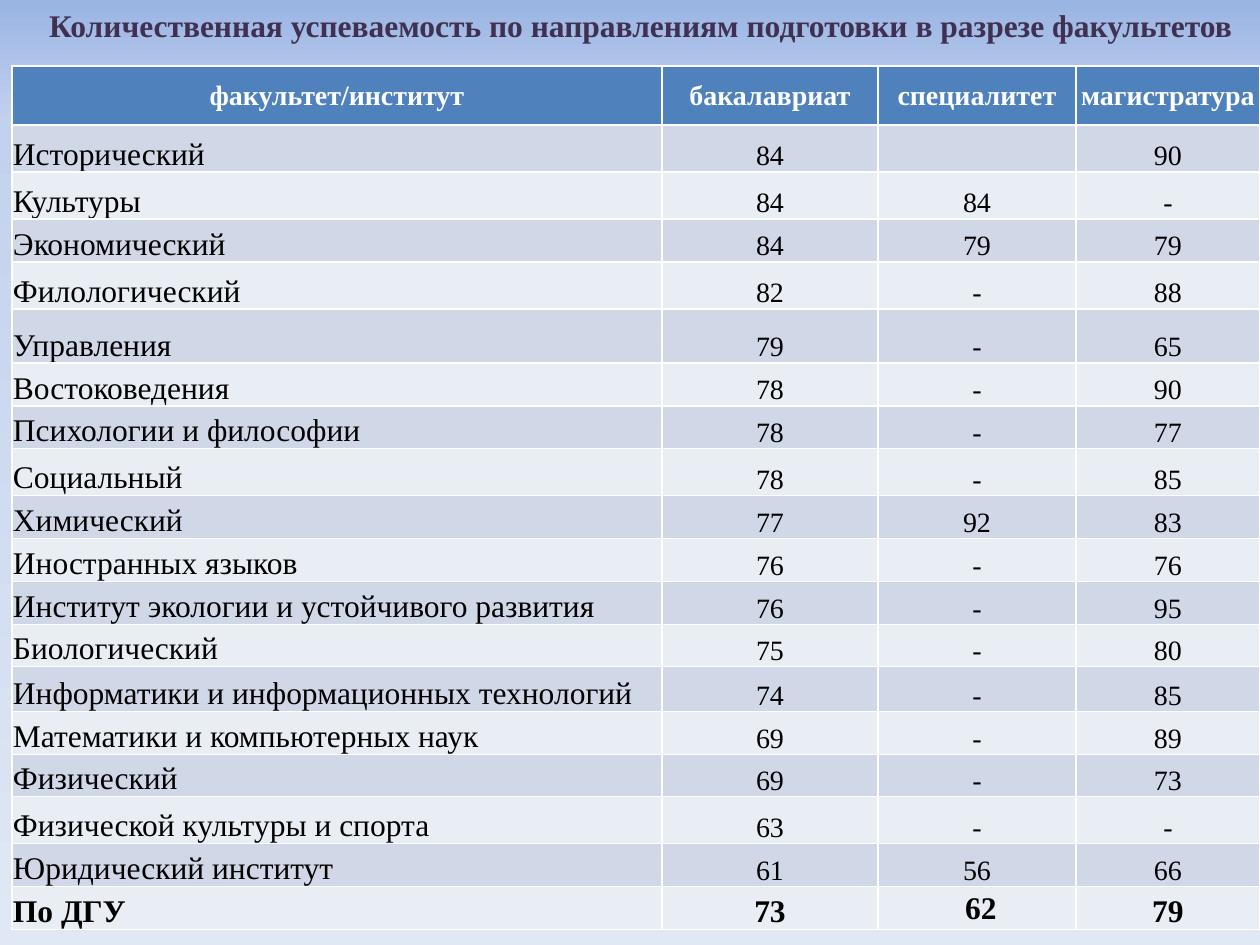
from copy import deepcopy
from pptx import Presentation
from pptx.dml.color import RGBColor
from pptx.enum.text import MSO_ANCHOR, PP_ALIGN
from pptx.util import Pt

SCALE = 914400 / 126
LEFT, CENTER = PP_ALIGN.LEFT, PP_ALIGN.CENTER
MIDDLE, BOTTOM = MSO_ANCHOR.MIDDLE, MSO_ANCHOR.BOTTOM
FONT = "Times New Roman"
TITLE = "Количественная успеваемость по направлениям подготовки в разрезе факультетов"
STOPS = [(0, "9AB5E4"), (0.13, "C2D1ED"), (1, "E1E8F5")]
BANDS = ["E9EDF4", "D0D8E8"]
WIDTHS = [650, 216, 198, 184]
HEIGHTS = [59, 47, 47, 43, 47, 54, 43, 43, 47, 43,
           43, 43, 42, 45, 43, 42, 47, 43, 43]
ROWS = [
    ("факультет/институт", "бакалавриат", "специалитет", "магистратура"),
    ("Исторический", "84", "", "90"),
    ("Культуры", "84", "84", "-"),
    ("Экономический", "84", "79", "79"),
    ("Филологический", "82", "-", "88"),
    ("Управления", "79", "-", "65"),
    ("Востоковедения", "78", "-", "90"),
    ("Психологии и философии", "78", "-", "77"),
    ("Социальный", "78", "-", "85"),
    ("Химический", "77", "92", "83"),
    ("Иностранных языков", "76", "-", "76"),
    ("Институт экологии и устойчивого развития", "76", "-", "95"),
    ("Биологический", "75", "-", "80"),
    ("Информатики и информационных технологий", "74", "-", "85"),
    ("Математики и компьютерных наук", "69", "-", "89"),
    ("Физический", "69", "-", "73"),
    ("Физической культуры и спорта", "63", "-", "-"),
    ("Юридический институт", "61", "56", "66"),
    ("По ДГУ", "73", " 62", "79"),
]


def px(n):
    return round(n * SCALE)


def color(code):
    return RGBColor.from_string(code)


def write(frame, text, size, code, bold, align):
    frame.text = text
    para = frame.paragraphs[0]
    para.alignment = align
    font = para.font
    font.name, font.size, font.bold = FONT, Pt(size), bold
    font.color.rgb = color(code)


def paint_back(slide):
    fill = slide.background.fill
    fill.gradient()
    fill.gradient_angle = 270
    first = slide.element.xpath(".//a:gs")[0]
    first.addnext(deepcopy(first))
    for stop, (place, code) in zip(fill.gradient_stops, STOPS):
        stop.position = place
        stop.color.rgb = color(code)


def add_title(slide):
    title = slide.shapes.title
    title.left, title.top, title.width, title.height = px(11), 0, px(1260), px(50)
    write(title.text_frame, TITLE, 18, "403152", True, CENTER)


def fill_cell(cell, text, row, col):
    head, total = row == 0, row == len(ROWS) - 1
    cell.margin_left = cell.margin_right = cell.margin_top = px(1)
    cell.margin_bottom = 0
    cell.vertical_anchor = MIDDLE if head or (total and col == 2) else BOTTOM
    cell.fill.solid()
    cell.fill.fore_color.rgb = color("4F81BD" if head else BANDS[row % 2])
    size = 18 if total or (col == 0 and not head) else 16
    align = LEFT if col == 0 and not head else CENTER
    write(cell.text_frame, text, size, "FFFFFF" if head else "000000",
          head or total, align)


def add_grid(slide):
    frame = slide.shapes.add_table(len(ROWS), len(WIDTHS), px(12), px(66),
                                   px(sum(WIDTHS)), px(sum(HEIGHTS)))
    table = frame.table
    for column, width in zip(table.columns, WIDTHS):
        column.width = px(width)
    for line, height in zip(table.rows, HEIGHTS):
        line.height = px(height)
    for row, texts in enumerate(ROWS):
        for col, text in enumerate(texts):
            fill_cell(table.cell(row, col), text, row, col)


def main():
    deck = Presentation()
    deck.slide_width, deck.slide_height = px(1260), px(945)
    slide = deck.slides.add_slide(deck.slide_layouts[5])
    paint_back(slide)
    add_title(slide)
    add_grid(slide)
    deck.save("out.pptx")


if __name__ == "__main__":
    main()
